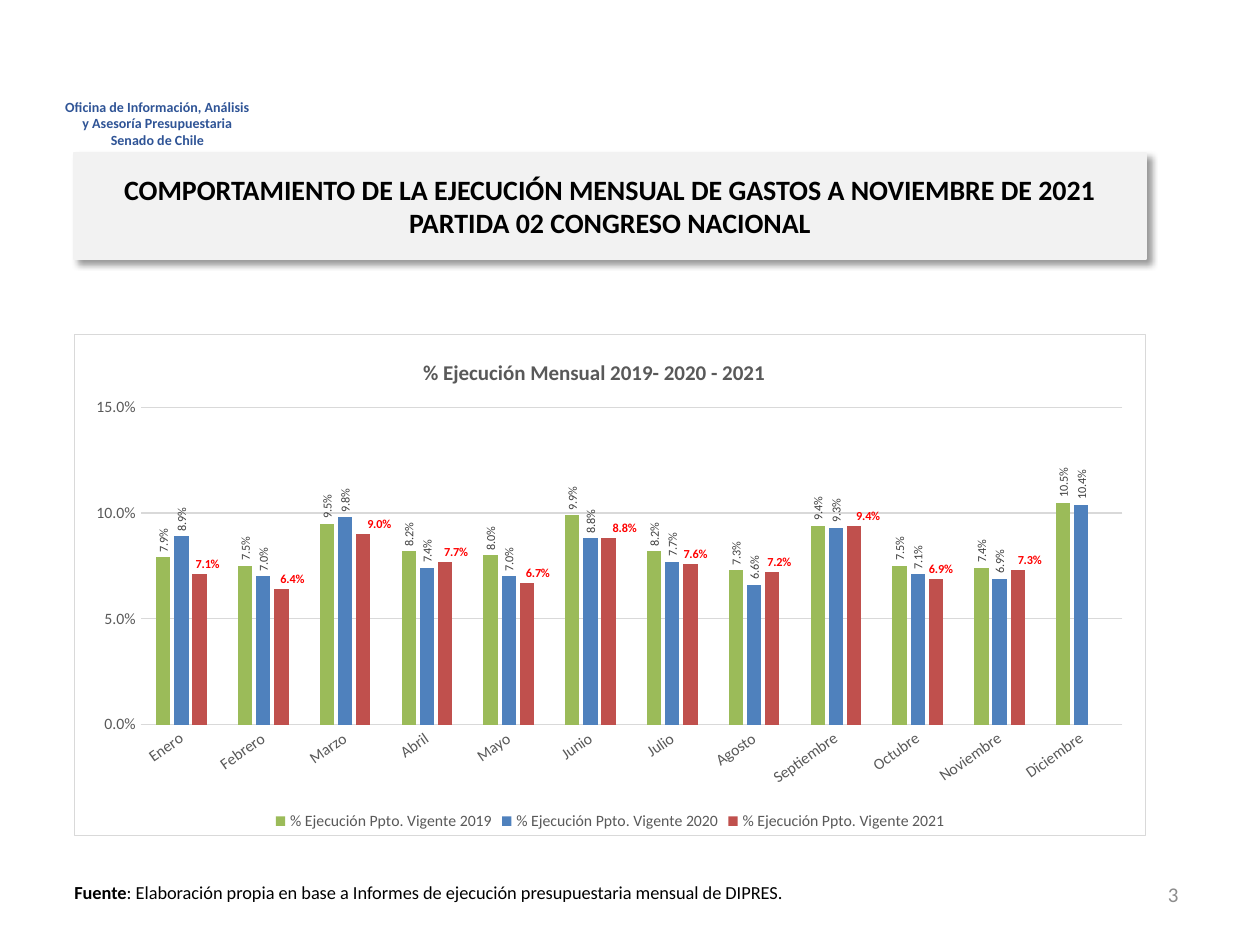
"""Build the slide on monthly budget spending of the Congress."""
from dataclasses import dataclass
from typing import Any

from lxml.etree import SubElement
from pptx import Presentation
from pptx.chart.data import CategoryChartData
from pptx.dml.color import RGBColor
from pptx.enum.chart import XL_CHART_TYPE, XL_LABEL_POSITION, XL_LEGEND_POSITION, XL_TICK_MARK
from pptx.enum.shapes import MSO_SHAPE
from pptx.enum.text import MSO_ANCHOR, PP_ALIGN
from pptx.oxml import parse_xml
from pptx.oxml.ns import nsdecls, qn
from pptx.util import Emu, Pt


@dataclass(frozen=True)
class Theme:
    face: str = "Calibri"
    black: str = "000000"
    white: str = "FFFFFF"
    navy: str = "2F5496"
    panel: str = "F2F2F2"
    grid: str = "D9D9D9"
    gray: str = "595959"
    dark: str = "404040"
    pale: str = "8C8C8C"
    green: str = "9BBB59"
    blue: str = "4F81BD"
    brick: str = "C0504D"
    red: str = "FF0000"
    head: float = 16
    title: float = 12
    note: float = 10.5
    axis: float = 9
    small: float = 8
    label: float = 7


T = Theme()


@dataclass(frozen=True)
class Run:
    text: str
    size: float
    color: str
    bold: bool = False


@dataclass(frozen=True)
class Box:
    left: int
    top: int
    wide: int
    high: int
    paras: tuple[tuple[Run, ...], ...] = ()
    align: PP_ALIGN = PP_ALIGN.LEFT
    anchor: MSO_ANCHOR = MSO_ANCHOR.TOP
    fill: str = ""


@dataclass(frozen=True)
class Series:
    year: int
    color: str
    ink: str
    vals: tuple[float | None, ...]
    bold: bool = False
    turn: int = 0
    shifts: tuple[int, ...] = ()


MONTHS = ("Enero", "Febrero", "Marzo", "Abril", "Mayo", "Junio", "Julio", "Agosto",
          "Septiembre", "Octubre", "Noviembre", "Diciembre")
ROWS = (
    Series(2019, T.green, T.dark, (0.079, 0.075, 0.095, 0.082, 0.08, 0.099, 0.082, 0.073,
                                   0.094, 0.075, 0.074, 0.105), turn=-90),
    Series(2020, T.blue, T.dark, (0.089, 0.07, 0.098, 0.074, 0.07, 0.088, 0.077, 0.066,
                                  0.093, 0.071, 0.069, 0.104), turn=-90),
    Series(2021, T.brick, T.red, (0.071, 0.064, 0.09, 0.077, 0.067, 0.088, 0.076, 0.072,
                                  0.094, 0.069, 0.073, None), bold=True,
           shifts=(8, 11, 16, 11, 11, 16, 5, 7, 14, 5, 12)),
)
OFFICE = Box(50, 92, 215, 60, (
    (Run("Oficina de Información, Análisis y Asesoría Presupuestaria", T.small, T.navy, True),),
    (Run("Senado de Chile", T.small, T.navy, True),),
), PP_ALIGN.CENTER)
HEAD = Box(74, 153, 1072, 106, (
    (Run("COMPORTAMIENTO DE LA EJECUCIÓN MENSUAL DE GASTOS A NOVIEMBRE DE 2021",
         T.head, T.black, True),),
    (Run("PARTIDA 02 CONGRESO NACIONAL", T.head, T.black, True),),
), PP_ALIGN.CENTER, MSO_ANCHOR.MIDDLE, T.panel)
PAGE = Box(897, 869, 294, 50, ((Run("3", T.title, T.pale),),),
           PP_ALIGN.RIGHT, MSO_ANCHOR.MIDDLE)
NOTE = Box(62, 875, 1134, 50, ((
    Run("Fuente", T.note, T.black, True),
    Run(": Elaboración propia en base a Informes de ejecución presupuestaria mensual de DIPRES.",
        T.note, T.black),
),))
PLOT = Box(74, 334, 1072, 502)


def px(count: int) -> Emu:
    return Emu(round(count * 914400 / 126))


def place(box: Box) -> tuple[Emu, ...]:
    return tuple(px(side) for side in (box.left, box.top, box.wide, box.high))


def style(font: Any, size: float, color: str, bold: bool = False) -> None:
    font.size, font.bold, font.name = Pt(size), bold, T.face
    font.color.rgb = RGBColor.from_string(color)


def paint(fill: Any, color: str) -> None:
    fill.solid()
    fill.fore_color.rgb = RGBColor.from_string(color)


def stroke(line: Any, color: str) -> None:
    paint(line.fill, color)
    line.width = Pt(0.75)


def draw(slide: Any, box: Box) -> Any:
    if box.fill:
        shape = slide.shapes.add_shape(MSO_SHAPE.RECTANGLE, *place(box))
        shape.shadow.inherit = False
        paint(shape.fill, box.fill)
        stroke(shape.line, box.fill)
    else:
        shape = slide.shapes.add_textbox(*place(box))
    frame = shape.text_frame
    frame.word_wrap, frame.vertical_anchor = True, box.anchor
    for spot, runs in enumerate(box.paras):
        para = frame.add_paragraph() if spot else frame.paragraphs[0]
        para.alignment = box.align
        for item in runs:
            run = para.add_run()
            run.text = item.text
            style(run.font, item.size, item.color, item.bold)
    return shape


def shade(shape: Any) -> None:
    glow = SubElement(shape.element.spPr.find(qn("a:effectLst")), qn("a:outerShdw"),
                      blurRad=str(Pt(4)), dist=str(Pt(3)), dir="2700000", algn="tl")
    tint = SubElement(glow, qn("a:srgbClr"), val=T.black)
    SubElement(tint, qn("a:alpha"), val="40000")


def move(owner: Any, spot: int, x: int, y: int, wide: int = 0, high: int = 0,
         edge: bool = True) -> None:
    for old in owner.findall(qn("c:layout")):
        owner.remove(old)
    parts = {"layoutTarget": "inner"} if wide else {}
    if edge:
        parts |= {"xMode": "edge", "yMode": "edge"}
    parts |= {"x": x / PLOT.wide, "y": y / PLOT.high}
    if wide:
        parts |= {"w": wide / PLOT.wide, "h": high / PLOT.high}
    body = "".join(f'<c:{key} val="{val}"/>' for key, val in parts.items())
    owner.insert(spot, parse_xml(
        f'<c:layout {nsdecls("c")}><c:manualLayout>{body}</c:manualLayout></c:layout>'))


def turn(owner: Any, angle: int) -> None:
    body = owner.find(qn("c:txPr")).find(qn("a:bodyPr"))
    body.set("rot", str(angle * 60000))
    body.set("vert", "horz")


def label(series: Any, row: Series) -> None:
    marks = series.data_labels
    marks.show_value, marks.position = True, XL_LABEL_POSITION.OUTSIDE_END
    marks.number_format, marks.number_format_is_linked = "0.0%", False
    style(marks.font, T.label, row.ink, row.bold)
    node = series._element.find(qn("c:dLbls"))
    turn(node, row.turn)
    for spot, shift in enumerate(row.shifts):
        mark = series.points[spot].data_label
        style(mark.font, T.label, row.ink, row.bold)
        mark.position = XL_LABEL_POSITION.OUTSIDE_END
        move(node.findall(qn("c:dLbl"))[spot], 1, shift, 2, edge=False)


def chart(slide: Any) -> None:
    data = CategoryChartData(number_format="0.0%")
    data.categories = MONTHS
    for row in ROWS:
        data.add_series(f"% Ejecución Ppto. Vigente {row.year}", row.vals)
    graph = slide.shapes.add_chart(XL_CHART_TYPE.COLUMN_CLUSTERED, *place(PLOT), data).chart
    style(graph.font, T.axis, T.gray)
    graph.has_title = True
    run = graph.chart_title.text_frame.paragraphs[0].add_run()
    run.text = "% Ejecución Mensual 2019- 2020 - 2021"
    style(run.font, T.title, T.gray, True)
    root = graph.element
    move(root.find(".//" + qn("c:title")), 1, 345, 20)
    move(root.find(".//" + qn("c:plotArea")), 0, 66, 73, 983, 318)
    root.find(qn("c:chart")).addnext(parse_xml(
        f'<c:spPr {nsdecls("c", "a")}><a:solidFill><a:srgbClr val="{T.white}"/></a:solidFill>'
        f'<a:ln w="{Pt(0.75)}"><a:solidFill><a:srgbClr val="{T.grid}"/></a:solidFill></a:ln>'
        '</c:spPr>'))
    graph.has_legend = True
    graph.legend.position, graph.legend.include_in_layout = XL_LEGEND_POSITION.BOTTOM, False
    style(graph.legend.font, T.axis, T.gray)
    months, rates = graph.category_axis, graph.value_axis
    for axis in (months, rates):
        axis.major_tick_mark = axis.minor_tick_mark = XL_TICK_MARK.NONE
        style(axis.tick_labels.font, T.axis, T.gray)
    turn(months._element, -35)
    stroke(months.format.line, T.grid)
    rates.format.line.fill.background()
    rates.minimum_scale, rates.maximum_scale, rates.major_unit = 0, 0.15, 0.05
    rates.tick_labels.number_format = "0.0%"
    rates.tick_labels.number_format_is_linked = False
    stroke(rates.major_gridlines.format.line, T.grid)
    plot = graph.plots[0]
    plot.gap_width, plot.overlap, plot.vary_by_categories = 219, -27, False
    for series, row in zip(plot.series, ROWS):
        paint(series.format.fill, row.color)
        label(series, row)


def main() -> None:
    deck = Presentation()
    deck.slide_width, deck.slide_height = px(1260), px(945)
    slide = deck.slides.add_slide(deck.slide_layouts[6])
    draw(slide, OFFICE)
    shade(draw(slide, HEAD))
    draw(slide, PAGE)
    draw(slide, NOTE)
    chart(slide)
    deck.save("out.pptx")


if __name__ == "__main__":
    main()
